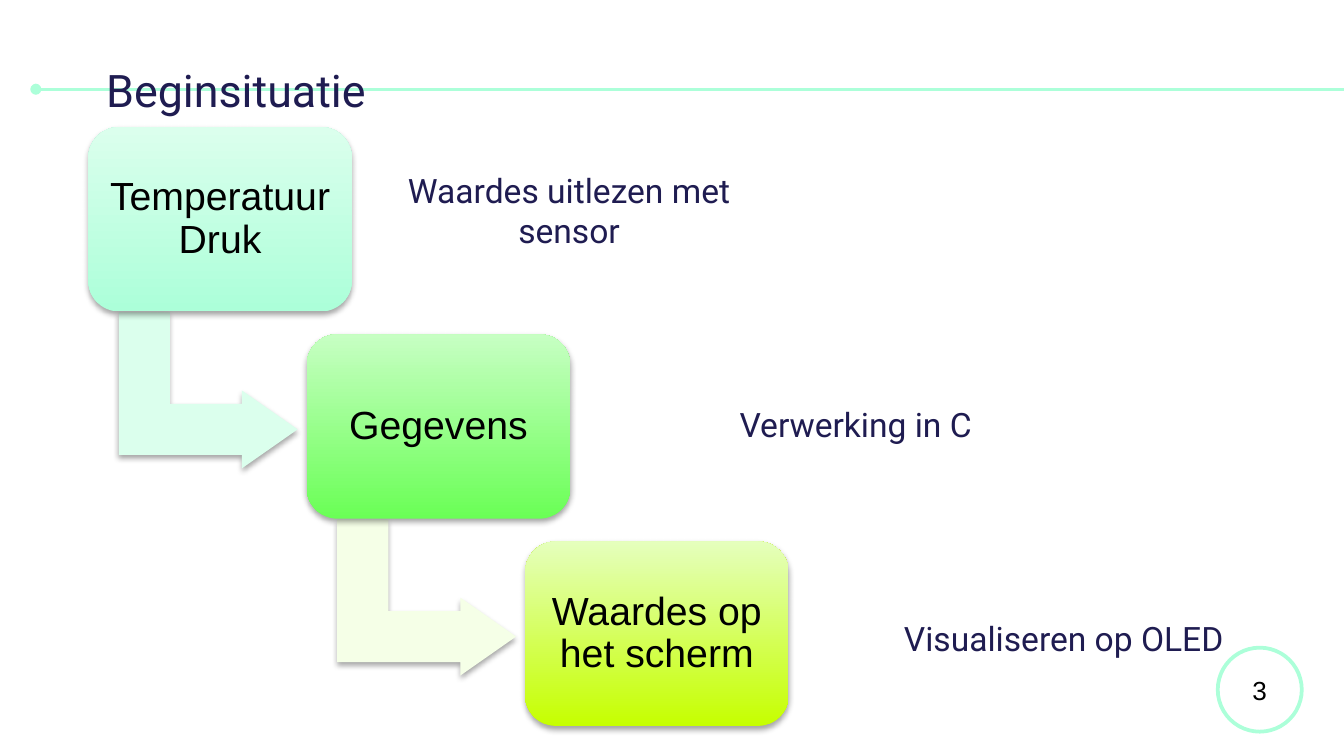
from lxml import etree
from pptx import Presentation
from pptx.dml.color import RGBColor
from pptx.enum.shapes import MSO_CONNECTOR, MSO_SHAPE
from pptx.enum.text import MSO_ANCHOR as ANCHOR, MSO_AUTO_SIZE as AUTO_SIZE, PP_ALIGN as ALIGN
from pptx.oxml import parse_xml
from pptx.oxml.ns import nsdecls, qn
from pptx.util import Pt

COLORS = {
    "navy": "1F1C51", "black": "000000", "white": "FFFFFF", "mint": "ACFFD9",
    "pale_mint": "DBFFED", "green": "6AFF56", "pale_green": "C7FFC3",
    "lime": "C6FF00", "pale_lime": "E5FFBD", "arrow_lime": "F5FFE7",
}
# box text, bottom colour, top colour, colour of the arrow to the next step
STEPS = [
    ("Temperatuur Druk", "mint", "pale_mint", "pale_mint"),
    ("Gegevens", "green", "pale_green", "arrow_lime"),
    ("Waardes op het scherm", "lime", "pale_lime", None),
]
# text, left, top
LABELS = [
    ("Waardes uitlezen met sensor", 201.6, 99),
    ("Verwerking in C", 355.2, 202.7),
    ("Visualiseren op OLED", 466.6, 317.5),
]
BOX_LEFT, BOX_TOP, BOX_W, BOX_H = 47.3, 68.1, 141.2, 98.8
STEP_X, STEP_Y = 117, 111
ARROW_DX, ARROW_DY, ARROW_W, ARROW_H = 22.5, 93.2, 83.5, 95.8


def rgb(name):
    return RGBColor.from_string(COLORS[name])


def write(tf, text, size, font, color, align, anchor, inset):
    tf.word_wrap = True
    tf.auto_size = AUTO_SIZE.NONE
    tf.vertical_anchor = anchor
    tf.margin_left = tf.margin_right = tf.margin_top = tf.margin_bottom = Pt(inset)
    p = tf.paragraphs[0]
    p.alignment = align
    r = p.add_run()
    r.text = text
    r.font.size = Pt(size)
    r.font.name = font
    r.font.color.rgb = rgb(color)
    return p


def add_soft_shadow(sp):
    sp._element.spPr.append(parse_xml(
        f'<a:effectLst {nsdecls("a")}>'
        '<a:outerShdw blurRad="40000" dist="23000" dir="5400000" rotWithShape="0">'
        f'<a:srgbClr val="{COLORS["black"]}"><a:alpha val="35000"/></a:srgbClr>'
        '</a:outerShdw></a:effectLst>'))


def add_title(slide, text):
    title = slide.shapes.title
    title.left, title.top, title.width, title.height = Pt(49.7), Pt(26.6), Pt(479), Pt(42.5)
    write(title.text_frame, text, 24, "Roboto", "navy", ALIGN.LEFT, ANCHOR.MIDDLE, 7.2)


def add_title_line(slide):
    """Draw the line with a round start, behind the title."""
    line = slide.shapes.add_connector(MSO_CONNECTOR.STRAIGHT, Pt(19.2), Pt(47.8), Pt(720), Pt(47.8))
    line.line.color.rgb = rgb("mint")
    line.line.width = Pt(1.5)
    etree.SubElement(line.line._get_or_add_ln(), qn("a:headEnd"), type="oval")
    etree.SubElement(line._element.spPr, qn("a:effectLst"))
    slide.shapes._spTree.insert(2, line._element)


def add_step_arrow(slide, left, top, color):
    sp = slide.shapes.add_shape(MSO_SHAPE.BENT_UP_ARROW, Pt(left), Pt(top), Pt(ARROW_W), Pt(ARROW_H))
    sp.rotation = 90
    for i, value in enumerate((0.328, 0.25, 0.358)):
        sp.adjustments[i] = value
    sp.fill.solid()
    sp.fill.fore_color.rgb = rgb(color)
    sp.line.fill.background()
    add_soft_shadow(sp)


def add_step_box(slide, left, top, text, bottom_color, top_color):
    sp = slide.shapes.add_shape(MSO_SHAPE.ROUNDED_RECTANGLE, Pt(left), Pt(top), Pt(BOX_W), Pt(BOX_H))
    sp.fill.gradient()
    sp.fill.gradient_angle = 90
    for stop, color in zip(sp.fill.gradient_stops, (bottom_color, top_color)):
        stop.color.rgb = rgb(color)
    sp.line.fill.background()
    add_soft_shadow(sp)
    p = write(sp.text_frame, text, 21, "Arial", "black", ALIGN.CENTER, ANCHOR.MIDDLE, 6)
    p.line_spacing = 0.9


def add_label(slide, text, left, top):
    sp = slide.shapes.add_textbox(Pt(left), Pt(top), Pt(206.6), Pt(42.5))
    write(sp.text_frame, text, 18, "Roboto", "navy", ALIGN.CENTER, ANCHOR.BOTTOM, 7.2)


def add_page_number(slide, number):
    sp = slide.shapes.add_shape(MSO_SHAPE.OVAL, Pt(652.4), Pt(347), Pt(45), Pt(45))
    sp.shadow.inherit = False
    sp.fill.solid()
    sp.fill.fore_color.rgb = rgb("white")
    sp.line.color.rgb = rgb("mint")
    sp.line.width = Pt(2)
    write(sp.text_frame, number, 14, "Arial", "black", ALIGN.CENTER, ANCHOR.MIDDLE, 0)


def main():
    prs = Presentation()
    prs.slide_width, prs.slide_height = Pt(720), Pt(405)
    slide = prs.slides.add_slide(prs.slide_layouts[5])
    add_title(slide, "Beginsituatie")
    add_title_line(slide)
    for i, (text, bottom_color, top_color, arrow_color) in enumerate(STEPS):
        left, top = BOX_LEFT + i * STEP_X, BOX_TOP + i * STEP_Y
        if arrow_color:
            add_step_arrow(slide, left + ARROW_DX, top + ARROW_DY, arrow_color)
        add_step_box(slide, left, top, text, bottom_color, top_color)
    for text, left, top in LABELS:
        add_label(slide, text, left, top)
    add_page_number(slide, "3")
    prs.save("out.pptx")


if __name__ == "__main__":
    main()
